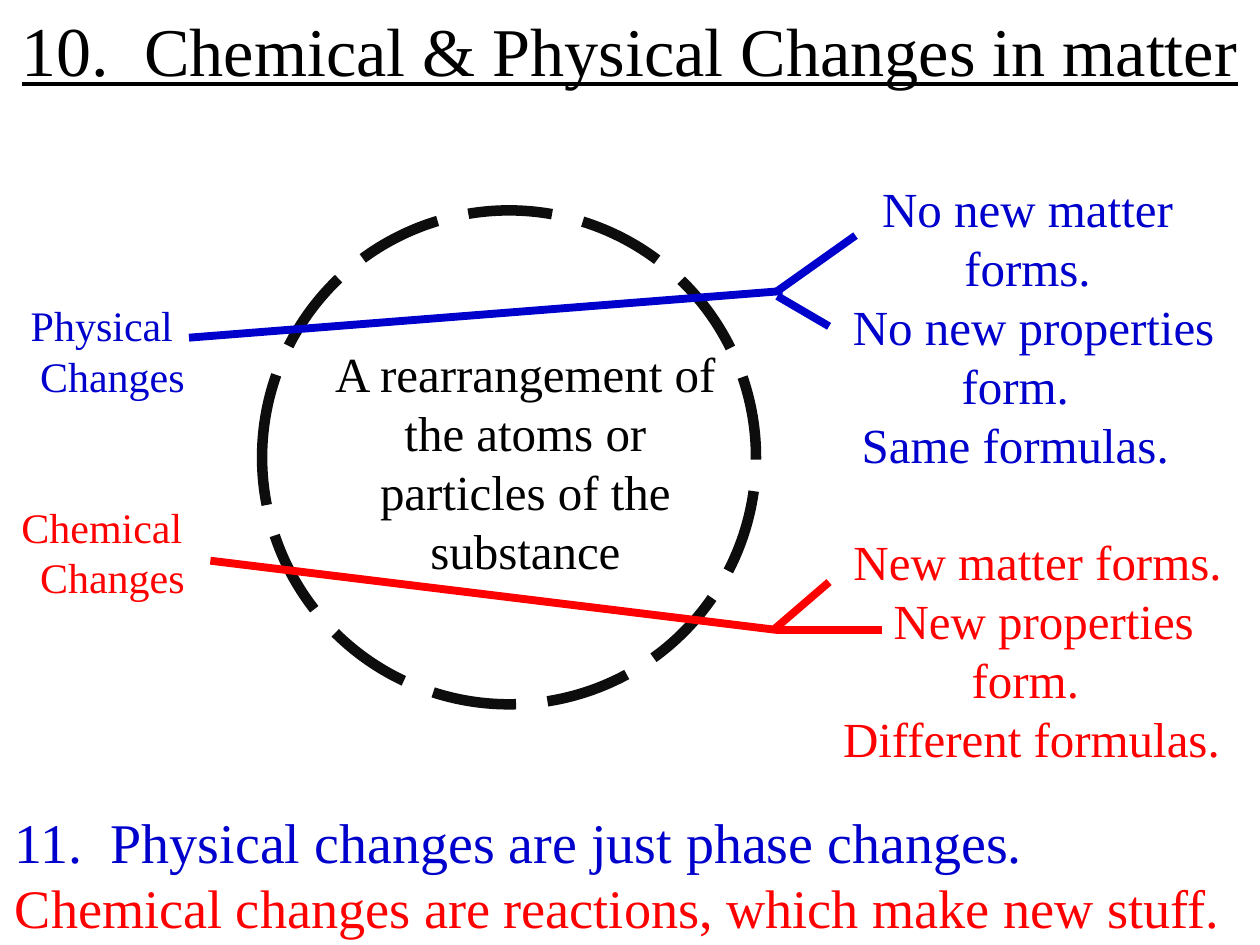
from dataclasses import dataclass

import pptx
import pptx.dml.color
import pptx.enum.dml
import pptx.enum.shapes
import pptx.enum.text
import pptx.oxml.ns
import pptx.util
from lxml import etree

Inches = pptx.util.Inches
Pt = pptx.util.Pt
RGBColor = pptx.dml.color.RGBColor
Align = pptx.enum.text.PP_ALIGN

BLACK = RGBColor(0, 0, 0)
DARK = RGBColor(0x0D, 0x0D, 0x0D)
BLUE = RGBColor(0, 0, 0xCC)
RED = RGBColor(0xFF, 0, 0)


@dataclass
class Part:
    text: str
    size: float
    color: RGBColor
    under: bool = False


@dataclass
class Label:
    box: tuple[float, float, float, float]
    paras: list[list[Part]]
    align: Align = Align.CENTER
    gap: float = 0


@dataclass
class Stroke:
    start: tuple[float, float]
    end: tuple[float, float]
    color: RGBColor


def assign(target, values: dict) -> None:
    for name, value in values.items():
        setattr(target, name, value)


def write(para, part: Part) -> None:
    for index, line in enumerate(part.text.split("\n")):
        if index:
            para.add_line_break()
        if line:
            run = para.add_run()
            run.text = line
            assign(run.font, {"name": "Times New Roman", "size": Pt(part.size),
                              "underline": part.under})
            run.font.color.rgb = part.color


def draw_label(slide, label: Label) -> None:
    frame = slide.shapes.add_textbox(*map(Inches, label.box)).text_frame
    assign(frame, {"word_wrap": True,
                   "auto_size": pptx.enum.text.MSO_AUTO_SIZE.SHAPE_TO_FIT_TEXT})
    for index, parts in enumerate(label.paras):
        para = frame.add_paragraph() if index else frame.paragraphs[0]
        para.alignment = label.align
        if index:
            para.space_before = Pt(label.gap)
        for part in parts:
            write(para, part)


def draw_stroke(slide, stroke: Stroke) -> None:
    line = slide.shapes.add_connector(
        pptx.enum.shapes.MSO_CONNECTOR.STRAIGHT,
        *map(Inches, stroke.start + stroke.end))
    line.line.color.rgb = stroke.color
    line.line.width = Pt(4.5)
    etree.SubElement(line._element.spPr, pptx.oxml.ns.qn("a:effectLst"))


def draw_ring(slide) -> None:
    ring = slide.shapes.add_shape(
        pptx.enum.shapes.MSO_SHAPE.OVAL,
        *map(Inches, (2.08, 1.67, 3.92, 3.92)))
    ring.shadow.inherit = False
    ring.fill.background()
    ring.line.color.rgb = DARK
    assign(ring.line, {"width": Pt(6),
                       "dash_style": pptx.enum.dml.MSO_LINE.LONG_DASH})


LABELS = [
    Label((0, 0, 10, 0.77), [[
        Part("10.  ", 40, BLACK, True),
        Part("Chemical & Physical Changes in matter", 39, BLACK, True)]]),
    Label((0.04, 2.33, 1.62, 2.52), [
        [Part("Physical \n Changes", 24, BLUE)],
        [Part("Chemical \n Changes", 24, RED)]], gap=57.5),
    Label((2.42, 2.68, 3.5, 1.99), [[
        Part("A rearrangement of the atoms or particles of the substance",
             28, BLACK)]]),
    Label((6.49, 1.37, 3.33, 2.46), [[
        Part("No new matter forms.\n No new properties form.  \n"
             "Same formulas.  ", 28, BLUE)]]),
    Label((6.57, 4.17, 3.33, 1.99), [[
        Part("New matter forms.\n New properties form.  \n"
             "Different formulas.  ", 28, RED)]]),
    Label((0.02, 6.36, 9.96, 1.16), [[
        Part("11.  Physical changes are just phase changes.\n", 32, BLUE),
        Part("Chemical changes are reactions, which make new stuff.", 31, RED)]],
        Align.LEFT),
]

STROKES = [
    Stroke((1.5, 2.68), (6.21, 2.31), BLUE),
    Stroke((6.79, 1.87), (6.17, 2.31), BLUE),
    Stroke((6.58, 2.59), (6.17, 2.35), BLUE),
    Stroke((1.67, 4.45), (6.17, 5), RED),
    Stroke((6.17, 5), (7, 5), RED),
    Stroke((6.15, 4.99), (6.58, 4.62), RED),
]


def main() -> None:
    deck = pptx.Presentation()
    assign(deck, {"slide_width": Inches(10), "slide_height": Inches(7.5)})
    slide = deck.slides.add_slide(deck.slide_layouts[6])
    draw_ring(slide)
    for stroke in STROKES:
        draw_stroke(slide, stroke)
    for label in LABELS:
        draw_label(slide, label)
    deck.save("out.pptx")


if __name__ == "__main__":
    main()
